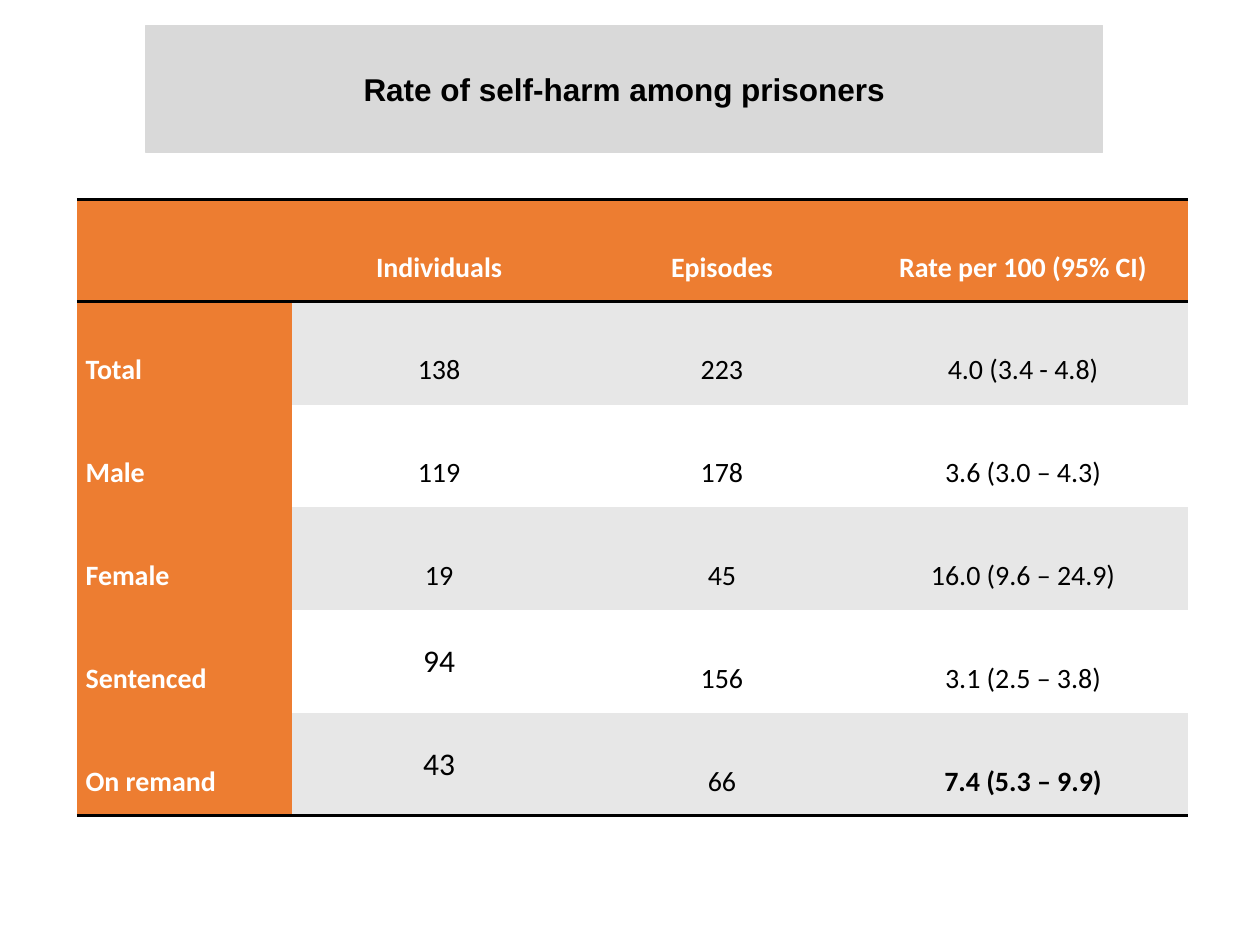
from lxml import etree
from pptx import Presentation
from pptx.dml.color import RGBColor
from pptx.enum.text import MSO_ANCHOR, PP_ALIGN
from pptx.oxml.ns import qn
from pptx.util import Inches, Pt

LEFT, CENTER = PP_ALIGN.LEFT, PP_ALIGN.CENTER
MIDDLE = MSO_ANCHOR.MIDDLE

BLACK = RGBColor(0x00, 0x00, 0x00)
WHITE = RGBColor(0xFF, 0xFF, 0xFF)
ORANGE = RGBColor(0xED, 0x7D, 0x31)
BAND_GRAY = RGBColor(0xE7, 0xE7, 0xE7)
TITLE_GRAY = RGBColor(0xD9, 0xD9, 0xD9)

TITLE_ONLY = 5
NO_STYLE_NO_GRID = "{2D5ABB26-0587-4C30-8999-92F81FD0307C}"

COLUMN_WIDTHS = (1.71, 2.33, 2.16, 2.62)
ROW_HEIGHT = 0.816
ROWS = (
    ("", "Individuals", "Episodes", "Rate per 100 (95% CI)"),
    ("Total", "138", "223", "4.0 (3.4 - 4.8)"),
    ("Male", "119", "178", "3.6 (3.0 – 4.3)"),
    ("Female", "19", "45", "16.0 (9.6 – 24.9)"),
    ("Sentenced", "94", "156", "3.1 (2.5 – 3.8)"),
    ("On remand", "43", "66", "7.4 (5.3 – 9.9)"),
)
LAST_ROW = len(ROWS) - 1
LARGE_CELLS = {(4, 1), (5, 1)}
BOLD_CELLS = {(5, 3)}


class SlideBuilder:
    def __init__(self, slide):
        self.slide = slide
        self.title_font = "Arial"
        self.table_font = "Calibri"

    def style_text(self, paragraph, font_name, size, color, bold, align):
        paragraph.alignment = align
        font = paragraph.font
        font.name, font.size, font.bold = font_name, Pt(size), bold
        font.color.rgb = color

    def title(self, text, left, top, width, height):
        box = self.slide.shapes.title
        box.left, box.top = Inches(left), Inches(top)
        box.width, box.height = Inches(width), Inches(height)
        box.fill.solid()
        box.fill.fore_color.rgb = TITLE_GRAY
        box.line.color.rgb = TITLE_GRAY
        box.line.width = Pt(0.75)
        frame = box.text_frame
        frame.text = text
        frame.word_wrap = True
        frame.vertical_anchor = MIDDLE
        self.style_text(frame.paragraphs[0], self.title_font, 18, BLACK, True, CENTER)

    def table(self, rows, left, top):
        frame = self.slide.shapes.add_table(
            len(rows), len(COLUMN_WIDTHS), Inches(left), Inches(top),
            Inches(sum(COLUMN_WIDTHS)), Inches(ROW_HEIGHT * len(rows)))
        table = frame.table
        table.horz_banding = False
        table._tbl.tblPr.find(qn("a:tableStyleId")).text = NO_STYLE_NO_GRID
        for column, width in zip(table.columns, COLUMN_WIDTHS):
            column.width = Inches(width)
        for row_index, texts in enumerate(rows):
            table.rows[row_index].height = Inches(ROW_HEIGHT)
            for column_index, text in enumerate(texts):
                self.cell(table.cell(row_index, column_index), text, row_index, column_index)

    def cell(self, cell, text, row, column):
        is_heading = row == 0 or column == 0
        is_large = (row, column) in LARGE_CELLS
        if row == 0:
            self.border(cell, "a:lnT")
        if row in (0, LAST_ROW):
            self.border(cell, "a:lnB")
        cell.fill.solid()
        if is_heading:
            cell.fill.fore_color.rgb = ORANGE
        else:
            cell.fill.fore_color.rgb = BAND_GRAY if row % 2 else WHITE
        cell.vertical_anchor = MIDDLE
        cell.margin_left = cell.margin_right = Inches(0.07)
        cell.margin_top = cell.margin_bottom = 0
        cell.text = text
        paragraph = cell.text_frame.paragraphs[0]
        paragraph.line_spacing = 1.0 if is_large or not text else 2.0
        self.style_text(
            paragraph, self.table_font, 18 if is_large else 16,
            WHITE if is_heading else BLACK,
            is_heading or (row, column) in BOLD_CELLS,
            CENTER if column else LEFT)

    def border(self, cell, tag):
        """Add a black rule; call before filling, as the schema puts lines first."""
        line = etree.SubElement(cell._tc.get_or_add_tcPr(), qn(tag), w=str(Pt(2)))
        fill = etree.SubElement(line, qn("a:solidFill"))
        etree.SubElement(fill, qn("a:srgbClr"), val=str(BLACK))


def main():
    deck = Presentation()
    deck.slide_width, deck.slide_height = Inches(10), Inches(7.5)
    page = SlideBuilder(deck.slides.add_slide(deck.slide_layouts[TITLE_ONLY]))
    page.title("Rate of self-harm among prisoners", 1.16, 0.2, 7.59, 1.01)
    page.table(ROWS, 0.61, 1.58)
    deck.save("out.pptx")


if __name__ == "__main__":
    main()
